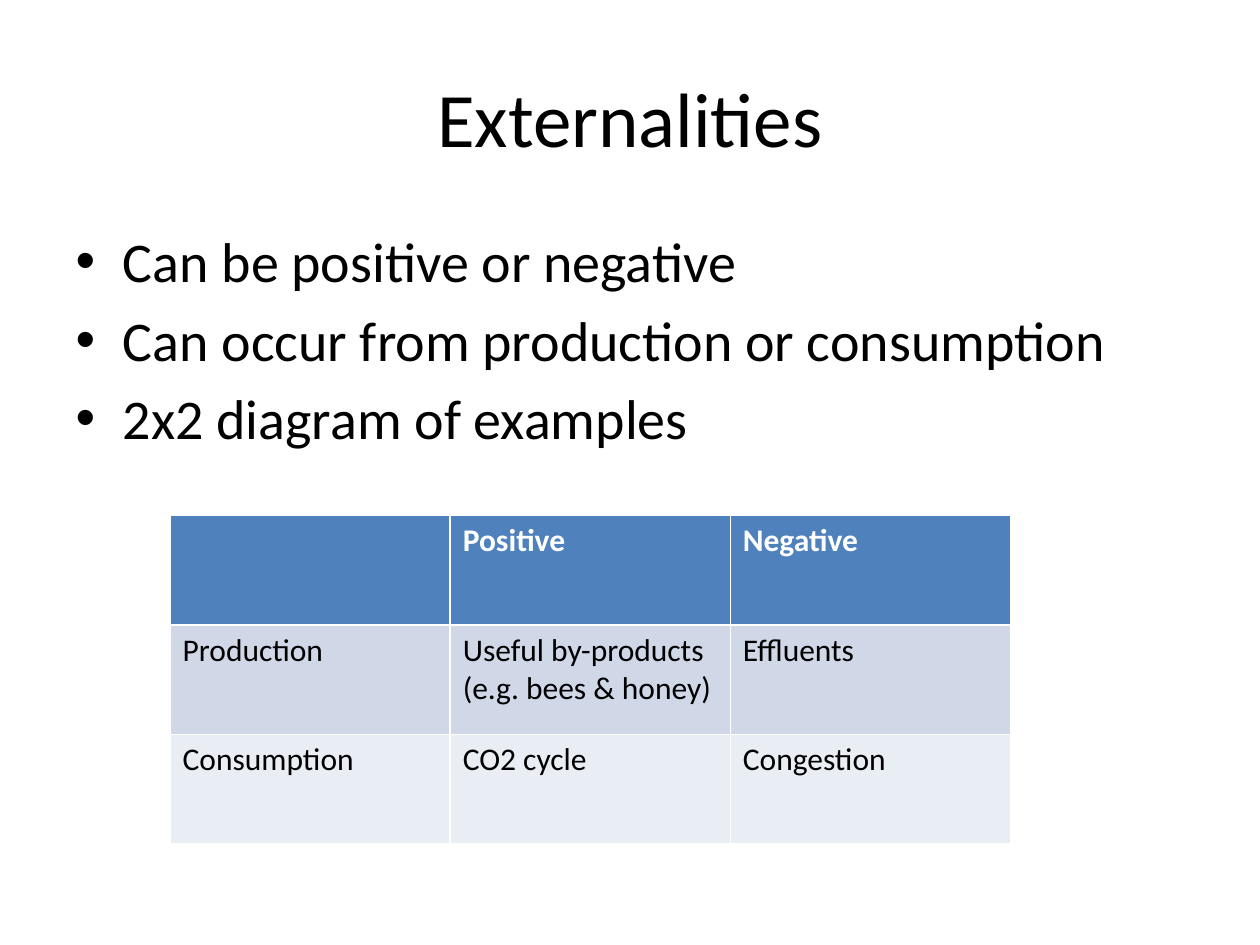
import pptx
import pptx.dml.color
import pptx.enum.text
import pptx.util

Inches = pptx.util.Inches
RGBColor = pptx.dml.color.RGBColor
PP_ALIGN = pptx.enum.text.PP_ALIGN
MSO_ANCHOR = pptx.enum.text.MSO_ANCHOR

FONT = "Calibri"
BLACK = RGBColor(0x00, 0x00, 0x00)
WHITE = RGBColor(0xFF, 0xFF, 0xFF)
HEADER_BLUE = RGBColor(0x4F, 0x81, 0xBD)
BAND_DARK = RGBColor(0xD0, 0xD8, 0xE8)
BAND_LIGHT = RGBColor(0xE9, 0xED, 0xF4)

BULLETS = [
    "Can be positive or negative",
    "Can occur from production or consumption",
    "2x2 diagram of examples",
]
EXAMPLES = [
    ["", "Positive", "Negative"],
    ["Production", "Useful by-products\n(e.g. bees & honey)", "Effluents"],
    ["Consumption", "CO2 cycle", "Congestion"],
]


def write_text(p, text, size=18, color=BLACK, bold=False, align=None):
    """Write formatted text into a paragraph, with a line break at each newline."""
    p.alignment = align
    for i, line in enumerate(text.split("\n")):
        if i:
            p.add_line_break()
        r = p.add_run()
        r.text = line
        r.font.name = FONT
        r.font.size = pptx.util.Pt(size)
        r.font.bold = bold
        r.font.color.rgb = color


def place(sp, left, top, width, height):
    """Move and size a shape to the given box."""
    sp.left, sp.top, sp.width, sp.height = left, top, width, height


def add_title(s, text, *box):
    """Fill the title placeholder within its box."""
    sp = s.shapes.title
    place(sp, *box)
    tf = sp.text_frame
    tf.vertical_anchor = MSO_ANCHOR.MIDDLE
    write_text(tf.paragraphs[0], text, size=44, align=PP_ALIGN.CENTER)


def add_bullets(s, items, *box):
    """Fill the body placeholder with a bulleted list."""
    sp = s.placeholders[1]
    place(sp, *box)
    tf = sp.text_frame
    for i, item in enumerate(items):
        p = tf.add_paragraph() if i else tf.paragraphs[0]
        write_text(p, item, size=32)


def add_examples(s, rows, left, top, width, height):
    """Add the table of examples with a header row and banded rows."""
    table = s.shapes.add_table(
        len(rows), len(rows[0]), left, top, width, height
    ).table
    fills = [HEADER_BLUE, BAND_DARK, BAND_LIGHT]
    for i, (row, fill) in enumerate(zip(rows, fills)):
        header = i == 0
        for j, text in enumerate(row):
            cell = table.cell(i, j)
            cell.fill.solid()
            cell.fill.fore_color.rgb = fill
            if text:
                write_text(
                    cell.text_frame.paragraphs[0],
                    text,
                    color=WHITE if header else BLACK,
                    bold=header,
                )


def main():
    """Build and save the slide."""
    prs = pptx.Presentation()
    prs.slide_width, prs.slide_height = Inches(10), Inches(7.5)
    s = prs.slides.add_slide(prs.slide_layouts[1])
    add_title(s, "Externalities", Inches(0.5), Inches(0.3), Inches(9), Inches(1.25))
    add_bullets(s, BULLETS, Inches(0.5), Inches(1.75), Inches(9), Inches(4.95))
    add_examples(s, EXAMPLES, Inches(1.35), Inches(4.09), Inches(6.67), Inches(2.61))
    prs.save("out.pptx")


if __name__ == "__main__":
    main()
